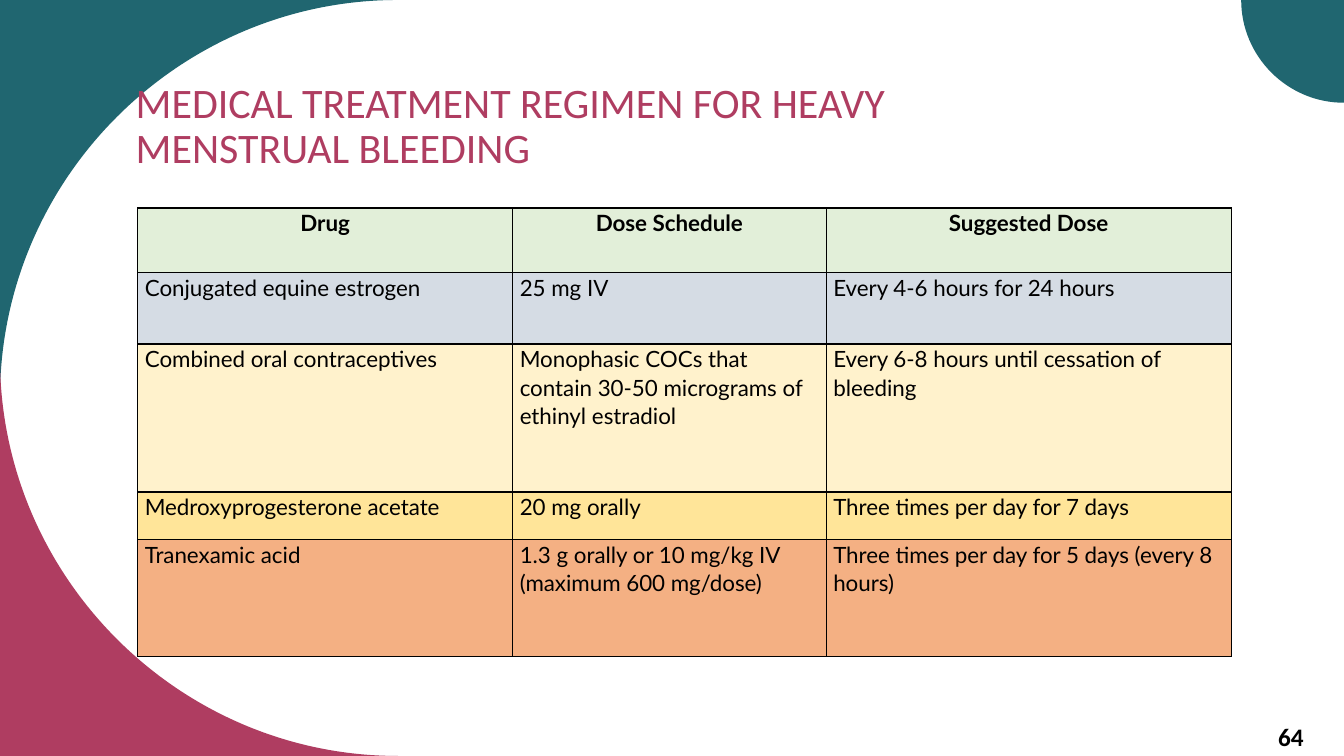
"""Build a slide with a table of drug regimens for heavy menstrual bleeding."""
from lxml import etree
from pptx import Presentation
from pptx.dml.color import RGBColor
from pptx.enum.text import MSO_ANCHOR, PP_ALIGN
from pptx.oxml.ns import qn
from pptx.util import Cm, Pt

LEFT, CENTER = PP_ALIGN.LEFT, PP_ALIGN.CENTER
TOP, MIDDLE = MSO_ANCHOR.TOP, MSO_ANCHOR.MIDDLE
TEAL, ROSE, BLACK = "206670", "AF3D61", "000000"
WIDTH, HEIGHT = 33.87, 19.05
BIG_RADIUS, SMALL_RADIUS = 10.03, 2.59
ARC_PULL = 0.55


def color(value):
    """Return the colour for a hex string."""
    return RGBColor.from_string(value)


def write(frame, text, paragraph_format, font_format, font_color):
    """Write one formatted paragraph into a text frame."""
    frame.word_wrap = True
    paragraph = frame.paragraphs[0]
    paragraph.text = text
    for name, value in paragraph_format.items():
        setattr(paragraph, name, value)
    font = paragraph.runs[0].font
    for name, value in font_format.items():
        setattr(font, name, value)
    font.color.rgb = color(font_color)


presentation = Presentation()
presentation.slide_width, presentation.slide_height = Cm(WIDTH), Cm(HEIGHT)
slide = presentation.slides.add_slide(presentation.slide_layouts[6])

corner_pieces = [
    ((0, 0), (BIG_RADIUS, 0), (0, BIG_RADIUS), (0, 0), TEAL),
    ((0, HEIGHT), (0, HEIGHT - BIG_RADIUS), (BIG_RADIUS, HEIGHT), (0, HEIGHT), ROSE),
    ((WIDTH, 0), (WIDTH - SMALL_RADIUS, 0), (WIDTH, SMALL_RADIUS),
     (WIDTH - SMALL_RADIUS, SMALL_RADIUS), TEAL),
]
for corner, start, end, bulge, fill in corner_pieces:
    controls = [
        tuple(a + ARC_PULL * (b - a) for a, b in zip(point, bulge)) for point in (start, end)
    ]
    builder = slide.shapes.build_freeform(Cm(corner[0]), Cm(corner[1]))
    builder.add_line_segments([(Cm(x), Cm(y)) for x, y in (start, *controls, end)], close=True)
    shape = builder.convert_to_shape()
    shape.shadow.inherit = False
    shape.fill.solid()
    shape.fill.fore_color.rgb = color(fill)
    shape.line.fill.background()
    segments = list(shape._element.iter(qn("a:lnTo")))
    curve = etree.Element(qn("a:cubicBezTo"))
    segments[0].addnext(curve)
    for segment in segments[1:4]:
        curve.append(segment[0])
        segment.getparent().remove(segment)

text_boxes = [
    ("MEDICAL TREATMENT REGIMEN FOR HEAVY MENSTRUAL BLEEDING",
     (3.17, 1.88, 20.27, 2.67), MIDDLE, LEFT, 30, False, ROSE),
    ("64", (30.63, 18.14, 3.81, 1.5), TOP, CENTER, 18, True, BLACK),
]
for text, box, anchor, alignment, size, bold, font_color in text_boxes:
    frame = slide.shapes.add_textbox(*map(Cm, box)).text_frame
    frame.vertical_anchor = anchor
    write(frame, text, {"alignment": alignment, "line_spacing": 0.9},
          {"name": "Calibri", "size": Pt(size), "bold": bold}, font_color)

column_widths = [9.45, 7.9, 10.21]
regimens = [
    (1.63, "E2EFD9", ["Drug", "Dose Schedule", "Suggested Dose"]),
    (1.8, "D5DCE4", ["Conjugated equine estrogen", "25 mg IV", "Every 4-6 hours for 24 hours"]),
    (3.73, "FFF2CC", ["Combined oral contraceptives",
                      "Monophasic COCs that contain 30-50 micrograms of ethinyl estradiol",
                      "Every 6-8 hours until cessation of bleeding"]),
    (1.2, "FFE599", ["Medroxyprogesterone acetate", "20 mg orally",
                     "Three times per day for 7 days"]),
    (2.95, "F4B083", ["Tranexamic acid", "1.3 g orally or 10 mg/kg IV (maximum 600 mg/dose)",
                      "Three times per day for 5 days (every 8 hours)"]),
]
table = slide.shapes.add_table(
    len(regimens), len(column_widths), Cm(3.47), Cm(5.24),
    Cm(sum(column_widths)), Cm(sum(height for height, _, _ in regimens)),
).table
table.first_row = table.horz_banding = False
for column, width in zip(table.columns, column_widths):
    column.width = Cm(width)

cell_margins = {"margin_left": Cm(0.18), "margin_right": Cm(0.18),
                "margin_top": 0, "margin_bottom": 0}
for row_index, (height, fill, texts) in enumerate(regimens):
    table.rows[row_index].height = Cm(height)
    is_header = row_index == 0
    for column_index, text in enumerate(texts):
        cell = table.cell(row_index, column_index)
        for name, value in cell_margins.items():
            setattr(cell, name, value)
        write(cell.text_frame, text,
              {"alignment": CENTER if is_header else LEFT,
               "line_spacing": 1.06, "space_after": Pt(8)},
              {"name": "Lato", "size": Pt(16), "bold": is_header}, BLACK)
        properties = cell._tc.get_or_add_tcPr()
        for side in ("a:lnL", "a:lnR", "a:lnT", "a:lnB"):
            border = etree.SubElement(properties, qn(side), w=str(Pt(1)))
            border_fill = etree.SubElement(border, qn("a:solidFill"))
            etree.SubElement(border_fill, qn("a:srgbClr"), val=BLACK)
        cell.fill.solid()
        cell.fill.fore_color.rgb = color(fill)

presentation.save("out.pptx")
